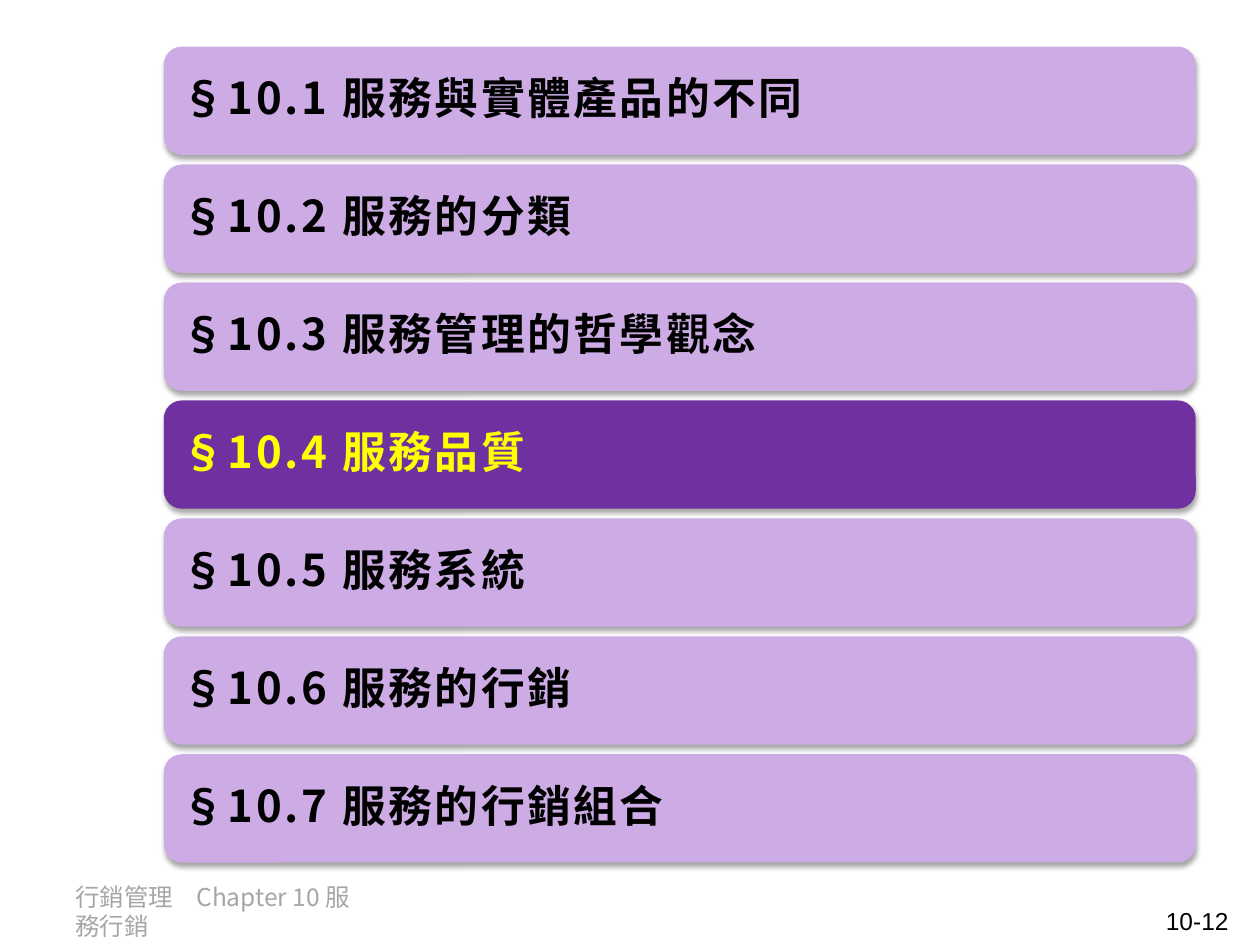
import pptx
import pptx.dml.color
import pptx.enum.shapes
import pptx.enum.text
import pptx.oxml
import pptx.oxml.ns
import pptx.util
from pptx.util import Inches

COLOURS = {
    "section": "CDACE6",
    "current": "7030A0",
    "text": "000000",
    "current text": "FFFF00",
    "footer": "A6A6A6",
}
CJK_FONT = "Noto Sans CJK SC"
SECTIONS = [
    "服務與實體產品的不同",
    "服務的分類",
    "服務管理的哲學觀念",
    "服務品質",
    "服務系統",
    "服務的行銷",
    "服務的行銷組合",
]
CURRENT_SECTION = 4
FIRST_TOP, PITCH = 0.37, 0.936
SHADOW = (
    '<a:outerShdw %s blurRad="40000" dist="23000" dir="5400000" rotWithShape="0">'
    '<a:srgbClr val="000000"><a:alpha val="35000"/></a:srgbClr></a:outerShdw>'
    % pptx.oxml.ns.nsdecls("a")
)
SECTION_FONT = {"size": pptx.util.Pt(25), "bold": True}
SMALL_FONT = {"size": pptx.util.Pt(14)}
SECTION_FRAME = {
    "word_wrap": True,
    "vertical_anchor": pptx.enum.text.MSO_ANCHOR.MIDDLE,
    "margin_left": Inches(0.1),
    "margin_right": Inches(0.1),
    "margin_top": Inches(0.1),
    "margin_bottom": Inches(0.1),
}
SECTION_PARAGRAPH = {
    "alignment": pptx.enum.text.PP_ALIGN.LEFT,
    "line_spacing": 0.9,
    "space_after": pptx.util.Pt(8.75),
}


def set_attributes(target, values):
    for name, value in values.items():
        setattr(target, name, value)


def colour(name):
    return pptx.dml.color.RGBColor.from_string(COLOURS[name])


def add_run(paragraph, text, font_name, font_values, colour_name):
    """Add a run whose East Asian characters use the CJK font."""
    run = paragraph.add_run()
    run.text = text
    set_attributes(run.font, {"name": font_name, **font_values})
    run.font.color.rgb = colour(colour_name)
    properties = run._r.get_or_add_rPr()
    east_asian = pptx.oxml.parse_xml(
        '<a:ea %s typeface="%s"/>' % (pptx.oxml.ns.nsdecls("a"), CJK_FONT)
    )
    properties.find(pptx.oxml.ns.qn("a:latin")).addnext(east_asian)
    return run


def add_section(slide, number, title):
    is_current = number == CURRENT_SECTION
    shape = slide.shapes.add_shape(
        pptx.enum.shapes.MSO_SHAPE.ROUNDED_RECTANGLE,
        Inches(1.3), Inches(FIRST_TOP + (number - 1) * PITCH),
        Inches(8.19), Inches(0.86),
    )
    shape.fill.solid()
    shape.fill.fore_color.rgb = colour("current" if is_current else "section")
    shape.line.fill.background()
    shape.shadow.inherit = False
    effects = shape._element.spPr.find(pptx.oxml.ns.qn("a:effectLst"))
    effects.append(pptx.oxml.parse_xml(SHADOW))

    set_attributes(shape.text_frame, SECTION_FRAME)
    paragraph = shape.text_frame.paragraphs[0]
    set_attributes(paragraph, SECTION_PARAGRAPH)
    text_colour = "current text" if is_current else "text"
    for text, font_name in ((f"§10.{number} ", CJK_FONT), (title, "Arial")):
        run = add_run(paragraph, text, font_name, SECTION_FONT, text_colour)
        run._r.get_or_add_rPr().set("spc", "150")


def add_small_text(slide, position, text, font_name, colour_name, alignment):
    box = slide.shapes.add_textbox(*map(Inches, position))
    box.text_frame.word_wrap = True
    paragraph = box.text_frame.paragraphs[0]
    paragraph.alignment = alignment
    add_run(paragraph, text, font_name, SMALL_FONT, colour_name)
    return paragraph


def add_tab_stop(paragraph, position):
    tabs = pptx.oxml.parse_xml(
        '<a:tabLst %s><a:tab pos="%d" algn="l"/></a:tabLst>'
        % (pptx.oxml.ns.nsdecls("a"), position)
    )
    paragraph._p.get_or_add_pPr().append(tabs)


def main():
    presentation = pptx.Presentation()
    presentation.slide_width = Inches(10)
    presentation.slide_height = Inches(7.5)
    slide = presentation.slides.add_slide(presentation.slide_layouts[6])

    align = pptx.enum.text.PP_ALIGN
    footer = add_small_text(
        slide, (0.5, 6.95, 2.45, 0.4), "行銷管理\tChapter 10 服務行銷",
        CJK_FONT, "footer", align.LEFT,
    )
    add_tab_stop(footer, Inches(0.96))
    add_small_text(
        slide, (7.52, 7.14, 2.33, 0.29), "10-12", "Arial", "text", align.RIGHT
    )
    for number, title in enumerate(SECTIONS, start=1):
        add_section(slide, number, title)
    presentation.save("out.pptx")


if __name__ == "__main__":
    main()
